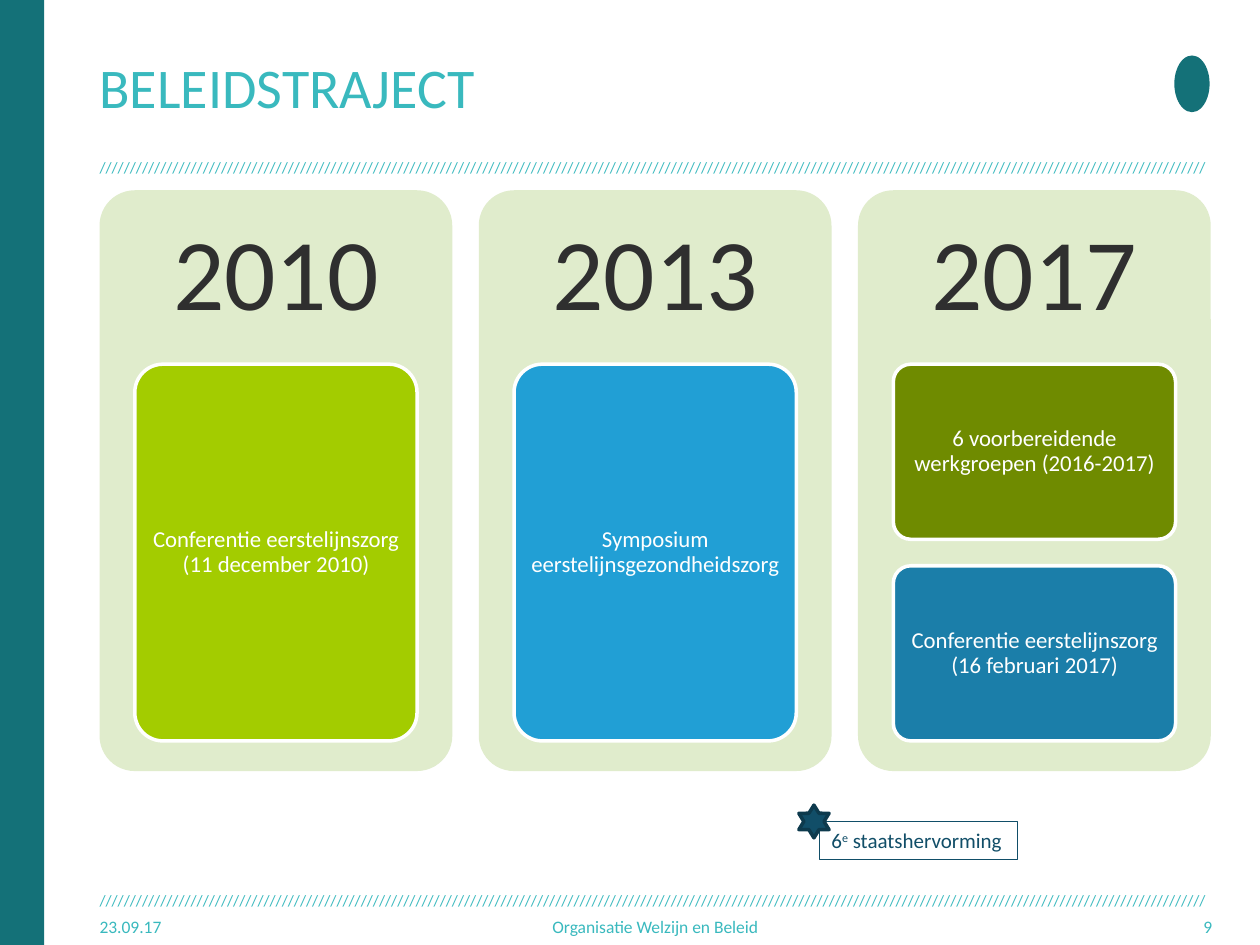
from dataclasses import dataclass

from pptx import Presentation
from pptx.dml.color import RGBColor
from pptx.enum.shapes import MSO_SHAPE as Preset
from pptx.enum.text import MSO_ANCHOR as Anchor, PP_ALIGN as Align
from pptx.util import Inches, Pt


@dataclass(frozen=True)
class Theme:
    font: str = "Calibri"
    teal: str = "147178"
    aqua: str = "39B9BE"
    panel: str = "E0ECCC"
    ink: str = "2F2F2F"
    navy: str = "114E68"
    dark_navy: str = "0D3A4D"
    white: str = "FFFFFF"
    lime: str = "A3CC00"
    blue: str = "219FD5"
    olive: str = "6F8B00"
    ocean: str = "1B7EA9"
    title_size: int = 32
    year_size: int = 58
    card_size: int = 13
    note_size: int = 12
    footer_size: int = 10
    rule_size: int = 9


THEME = Theme()
LEFT = 0.79
PANEL_TOP, PANEL_WIDTH, PANEL_HEIGHT, PANEL_PITCH = 1.51, 2.8, 4.61, 3.01
CARD_TOP, CARD_WIDTH, CARDS_HEIGHT, CARD_GAP = 2.89, 2.24, 2.99, 0.21
YEARS = [
    ("2010", [("Conferentie eerstelijnszorg (11 december 2010)", THEME.lime)]),
    ("2013", [("Symposium eerstelijnsgezondheidszorg", THEME.blue)]),
    ("2017", [("6 voorbereidende werkgroepen (2016-2017)", THEME.olive),
              ("Conferentie eerstelijnszorg (16 februari 2017)", THEME.ocean)]),
]


def write_text(shape, *parts, size, color, align=Align.LEFT, anchor=Anchor.MIDDLE,
               inset=(0, 0), line_spacing=1.0):
    frame = shape.text_frame
    frame.word_wrap = True
    frame.vertical_anchor = anchor
    frame.margin_left = frame.margin_right = Inches(inset[0])
    frame.margin_top = frame.margin_bottom = Inches(inset[1])
    paragraph = frame.paragraphs[0]
    paragraph.alignment = align
    paragraph.line_spacing = line_spacing
    for part in parts:
        run = paragraph.add_run()
        run.text = part
        run.font.name = THEME.font
        run.font.size = Pt(size)
        run.font.color.rgb = RGBColor.from_string(color)
    return paragraph


def add_label(slide, box, text, **text_format):
    write_text(slide.shapes.add_textbox(*map(Inches, box)), text, **text_format)


def add_preset(slide, preset, box, fill, line=None, line_width=2):
    shape = slide.shapes.add_shape(preset, *map(Inches, box))
    shape.shadow.inherit = False
    shape.fill.solid()
    shape.fill.fore_color.rgb = RGBColor.from_string(fill)
    if line:
        shape.line.color.rgb = RGBColor.from_string(line)
        shape.line.width = Pt(line_width)
    else:
        shape.line.fill.background()
    return shape


def add_rounded(slide, box, fill, line=None):
    shape = add_preset(slide, Preset.ROUNDED_RECTANGLE, box, fill, line)
    shape.adjustments[0] = 0.1
    return shape


def add_title(slide, text):
    title = slide.shapes.title
    title.left, title.top, title.width, title.height = map(Inches, (LEFT, 0.13, 8.35, 1.1))
    write_text(title, text, size=THEME.title_size, color=THEME.aqua)


def add_slash_rule(slide, top, height):
    add_label(slide, (LEFT, top, 8.9, height), "/" * 182, anchor=Anchor.TOP,
              size=THEME.rule_size, color=THEME.aqua)


def add_year_panel(slide, index, year, cards):
    left = LEFT + index * PANEL_PITCH
    add_rounded(slide, (left, PANEL_TOP, PANEL_WIDTH, PANEL_HEIGHT), THEME.panel)
    add_label(slide, (left, PANEL_TOP, PANEL_WIDTH, CARD_TOP - PANEL_TOP), year,
              size=THEME.year_size, color=THEME.ink, align=Align.CENTER,
              inset=(0.24, 0.24), line_spacing=0.9)
    card_left = left + (PANEL_WIDTH - CARD_WIDTH) / 2
    card_height = (CARDS_HEIGHT - CARD_GAP * (len(cards) - 1)) / len(cards)
    for row, (text, fill) in enumerate(cards):
        top = CARD_TOP + row * (card_height + CARD_GAP)
        card = add_rounded(slide, (card_left, top, CARD_WIDTH, card_height), fill, THEME.white)
        write_text(card, text, size=THEME.card_size, color=THEME.white,
                   align=Align.CENTER, inset=(0.04, 0.03), line_spacing=0.9)


def add_reform_note(slide):
    note = add_preset(slide, Preset.RECTANGLE, (6.5, 6.52, 1.57, 0.3), THEME.white,
                      THEME.navy, 0.25)
    paragraph = write_text(note, "6", "e", " staatshervorming", size=THEME.note_size,
                           color=THEME.navy, anchor=Anchor.TOP, inset=(0.1, 0.05))
    paragraph.runs[1].font._element.set("baseline", "30000")
    add_preset(slide, Preset.STAR_6_POINT, (6.34, 6.39, 0.24, 0.26), THEME.navy,
               THEME.dark_navy)


def add_footer(slide):
    for text, left, width, align in (
        ("23.09.17", LEFT, 1.21, Align.LEFT),
        ("Organisatie Welzijn en Beleid", 2.64, 5.12, Align.CENTER),
        ("9", 8.39, 1.23, Align.RIGHT),
    ):
        add_label(slide, (left, 7.21, width, 0.29), text, align=align,
                  size=THEME.footer_size, color=THEME.aqua)


def main():
    presentation = Presentation()
    presentation.slide_width, presentation.slide_height = Inches(10), Inches(7.5)
    slide = presentation.slides.add_slide(presentation.slide_layouts[5])
    add_preset(slide, Preset.RECTANGLE, (0, 0, 0.35, 7.5), THEME.teal)
    add_slash_rule(slide, 7.07, 0.3)
    add_slash_rule(slide, 1.25, 0.25)
    add_preset(slide, Preset.OVAL, (9.32, 0.44, 0.28, 0.45), THEME.teal)
    add_title(slide, "BELEIDSTRAJECT")
    add_footer(slide)
    for index, (year, cards) in enumerate(YEARS):
        add_year_panel(slide, index, year, cards)
    add_reform_note(slide)
    presentation.save("out.pptx")


if __name__ == "__main__":
    main()
